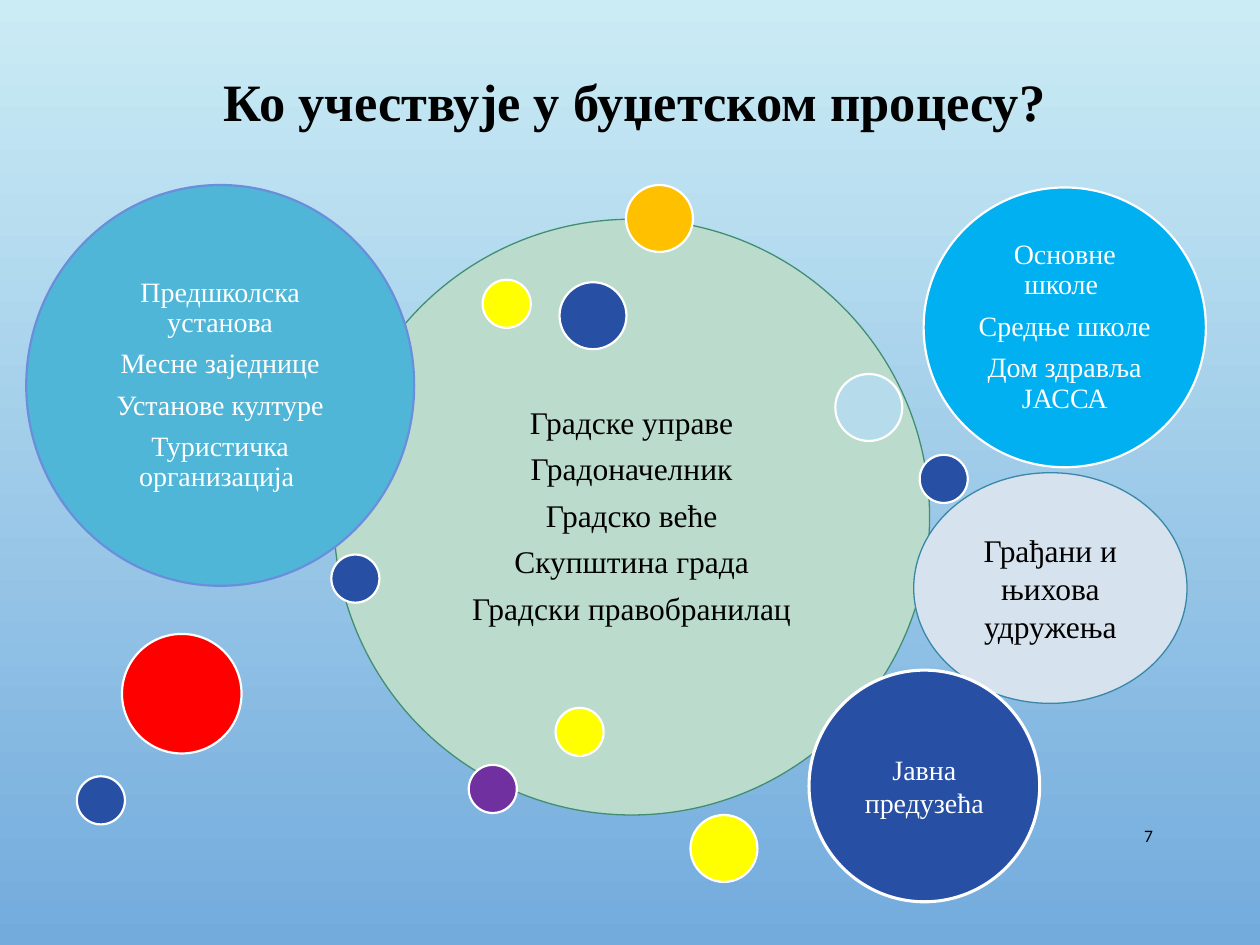
from pptx import Presentation
from pptx.dml.color import RGBColor
from pptx.enum.shapes import MSO_SHAPE
from pptx.enum.text import MSO_ANCHOR, PP_ALIGN
from pptx.util import Cm, Pt

OVAL = MSO_SHAPE.OVAL
MIDDLE, TOP = MSO_ANCHOR.MIDDLE, MSO_ANCHOR.TOP
CENTER, RIGHT = PP_ALIGN.CENTER, PP_ALIGN.RIGHT

BLACK, WHITE = "000000", "FFFFFF"
NAVY, YELLOW = "274FA4", "FFFF00"
SMALL, MEDIUM, LARGE = 0.97, 1.35, 2.41  # dot diameters in cm


def color(value):
    return RGBColor.from_string(value)


class SlideBuilder:
    serif = "Times New Roman"
    sans = "Calibri"

    def __init__(self, deck):
        self.page = deck.slides.add_slide(deck.slide_layouts[5])

    def background(self, top, bottom):
        fill = self.page.background.fill
        fill.gradient()
        fill.gradient_angle = 270
        for stop, value, position in zip(fill.gradient_stops, (top, bottom), (0, 1)):
            stop.color.rgb = color(value)
            stop.position = position

    def add_lines(self, box, lines, size, ink=BLACK, font=None, bold=False,
                  align=CENTER, anchor=MIDDLE, spaced=False):
        frame = box.text_frame
        frame.word_wrap = True
        frame.vertical_anchor = anchor
        for index, line in enumerate(lines):
            para = frame.add_paragraph() if index else frame.paragraphs[0]
            para.alignment = align
            if spaced:
                para.line_spacing = 0.9
                para.space_after = Pt(0.4 * size)
            span = para.add_run()
            span.text = line
            span.font.name = font or self.serif
            span.font.size = Pt(size)
            span.font.bold = bold
            span.font.color.rgb = color(ink)

    def title(self, words, left, top, width, height):
        box = self.page.shapes.title
        box.left, box.top, box.width, box.height = map(Cm, (left, top, width, height))
        self.add_lines(box, [words], 30, bold=True, anchor=TOP)

    def number(self, words, left, top, width, height):
        box = self.page.shapes.add_textbox(*map(Cm, (left, top, width, height)))
        self.add_lines(box, [words], 10, font=self.sans, align=RIGHT)

    def circle(self, left, top, width, height, fill, line=WHITE, weight=1.25):
        shape = self.page.shapes.add_shape(OVAL, *map(Cm, (left, top, width, height)))
        shape.shadow.inherit = False
        shape.fill.solid()
        shape.fill.fore_color.rgb = color(fill)
        shape.line.color.rgb = color(line)
        shape.line.width = Pt(weight)
        return shape

    def group_circle(self, place, lines, size, ink, fill, line=WHITE, weight=1.25):
        """Circle that lists several participants, one per paragraph."""
        shape = self.circle(*place, fill, line, weight)
        frame = shape.text_frame
        frame.margin_left = frame.margin_right = Cm(0.18)
        frame.margin_top = frame.margin_bottom = Cm(0.18)
        self.add_lines(shape, lines, size, ink, spaced=True)

    def label_circle(self, place, words, size, ink, fill, line, weight):
        self.add_lines(self.circle(*place, fill, line, weight), [words], size, ink)


def main():
    deck = Presentation()
    deck.slide_width, deck.slide_height = Cm(25.4), Cm(19.05)
    slide = SlideBuilder(deck)
    slide.background("CBECF5", "73ABDD")

    # Heading and page number
    slide.title("Ко учествује у буџетском процесу?", 2.54, 1.27, 20.52, 1.55)
    slide.number("7", 21.89, 16.33, 1.6, 1.02)

    # Groups of participants
    slide.group_circle(
        (6.73, 4.42, 12.01, 12.01),
        ["Градске управе", "Градоначелник", "Градско веће",
         "Скупштина града", "Градски правобранилац"],
        18, BLACK, "BBDBCD", "428E73", 0.75)
    slide.group_circle(
        (0.53, 3.73, 7.82, 8.08),
        ["Предшколска установа", "Месне заједнице",
         "Установе културе", "Туристичка организација "],
        16, WHITE, "50B6D7", "6A8EDC")
    slide.group_circle(
        (18.62, 3.78, 5.69, 5.64),
        ["Основне школе ", "Средње школе", "Дом здравља ЈАССА"],
        16, WHITE, "00B0F0")

    # Decorative dots
    dots = [
        (12.62, 3.73, MEDIUM, "FFC000"),
        (9.45, 15.42, SMALL, "7030A0"),
        (18.54, 9.17, SMALL, NAVY),
        (13.92, 16.43, MEDIUM, YELLOW),
        (9.73, 5.64, SMALL, YELLOW),
        (6.68, 11.18, SMALL, NAVY),
        (11.28, 5.69, MEDIUM, NAVY),
        (2.46, 12.78, LARGE, "FF0000"),
        (16.84, 7.54, MEDIUM, "B6DCEC"),
        (1.55, 15.65, SMALL, NAVY),
        (11.2, 14.27, SMALL, YELLOW),
    ]
    for left, top, size, fill in dots:
        slide.circle(left, top, size, size, fill)

    # Citizens and public companies
    slide.label_circle((18.42, 9.53, 5.51, 4.65), "Грађани и њихова удружења",
                       18, BLACK, "D6E2ED", "3A87A7", 0.75)
    slide.label_circle((16.31, 13.51, 4.65, 4.67), "Јавна предузећа",
                       16, WHITE, NAVY, WHITE, 1.75)

    deck.save("out.pptx")


if __name__ == "__main__":
    main()
